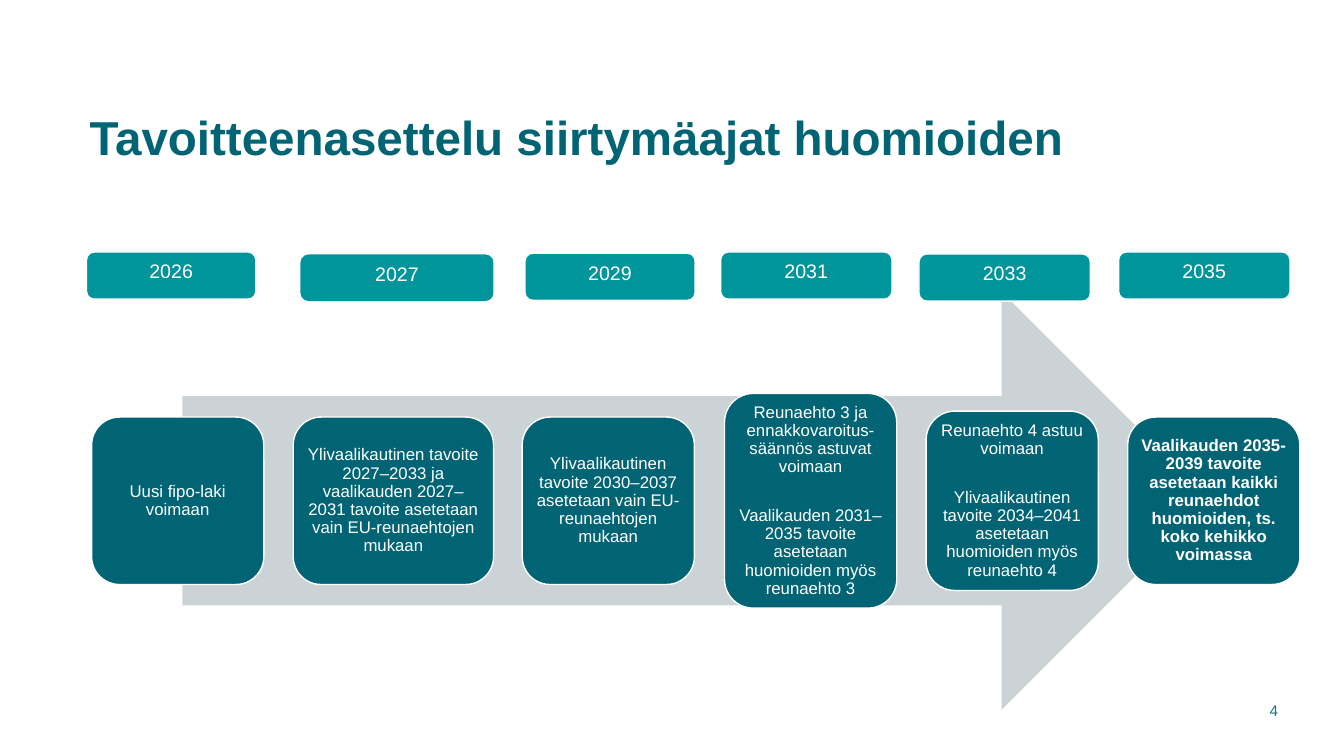
import pptx
import pptx.util
import pptx.dml.color
import pptx.enum.shapes
import pptx.enum.text
from dataclasses import dataclass

Cm, Pt = pptx.util.Cm, pptx.util.Pt
RGB = pptx.dml.color.RGBColor.from_string
SHAPE = pptx.enum.shapes.MSO_SHAPE
ALIGN = pptx.enum.text.PP_ALIGN
ANCHOR = pptx.enum.text.MSO_ANCHOR


@dataclass(frozen=True)
class Theme:
    font: str = "Arial"
    dark: str = "006475"
    teal: str = "00959B"
    grey: str = "CCD3D6"
    white: str = "FFFFFF"
    number: str = "1A7483"
    title_size: int = 34
    year_size: int = 14
    card_size: int = 12
    number_size: int = 11


THEME = Theme()

# Year, tag (left, top, width, height), tag outline, card (left, width, height), bold, paragraphs
STAGES = [
    ("2026", (2.18, 6.35, 4.27, 1.19), THEME.white, (2.31, 4.34, 4.22), False,
     ["Uusi fipo-laki voimaan"]),
    ("2027", (7.59, 6.43, 4.83, 1.14), THEME.teal, (7.39, 5.05, 4.22), False,
     ["Ylivaalikautinen tavoite 2027–2033 ja vaalikauden 2027–2031 tavoite "
      "asetetaan vain EU-reunaehtojen mukaan"]),
    ("2029", (13.23, 6.38, 4.29, 1.19), THEME.white, (13.16, 4.34, 4.22), False,
     ["Ylivaalikautinen tavoite 2030–2037 asetetaan vain EU-reunaehtojen mukaan"]),
    ("2031", (18.16, 6.35, 4.32, 1.19), THEME.white, (18.26, 4.34, 5.41), False,
     ["Reunaehto 3 ja ennakkovaroitus-säännös astuvat voimaan",
      "Vaalikauden 2031–2035 tavoite asetetaan huomioiden myös reunaehto 3"]),
    ("2033", (23.16, 6.4, 4.32, 1.19), THEME.white, (23.34, 4.34, 4.52), False,
     ["Reunaehto 4 astuu voimaan",
      "Ylivaalikautinen tavoite 2034–2041 asetetaan huomioiden myös reunaehto 4"]),
    ("2035", (28.19, 6.35, 4.32, 1.19), THEME.white, (28.42, 4.34, 4.22), True,
     ["Vaalikauden 2035-2039 tavoite asetetaan kaikki reunaehdot huomioiden, "
      "ts. koko kehikko voimassa"]),
]


def set_all(obj, values):
    for name, value in values.items():
        setattr(obj, name, value)


def write(sp, texts, size, color, frame, para, bold=False, gap=0):
    """Fill a shape with paragraphs that share one format."""
    tf = sp.text_frame
    set_all(tf, {"word_wrap": True, **frame})
    for i, text in enumerate(texts):
        p = tf.paragraphs[0] if i == 0 else tf.add_paragraph()
        set_all(p, para)
        if i:
            p.space_before = Pt(gap)
        r = p.add_run()
        r.text = text
        set_all(r.font, {"name": THEME.font, "size": Pt(size), "bold": bold})
        r.font.color.rgb = RGB(color)


def add_shape(s, kind, box, fill, line=None):
    sp = s.shapes.add_shape(kind, *map(Cm, box))
    sp.shadow.inherit = False
    sp.fill.solid()
    sp.fill.fore_color.rgb = RGB(fill)
    if line:
        sp.line.color.rgb = RGB(line)
        sp.line.width = Pt(1)
    else:
        sp.line.fill.background()
    return sp


def add_title(s, box, text):
    sp = s.shapes.add_textbox(*map(Cm, box))
    write(sp, [text], THEME.title_size, THEME.dark,
          {"vertical_anchor": ANCHOR.MIDDLE, "margin_left": 0, "margin_right": 0},
          {"line_spacing": 0.95}, bold=True)


def add_year(s, box, line, year):
    sp = add_shape(s, SHAPE.ROUNDED_RECTANGLE, box, THEME.teal, line)
    write(sp, [year], THEME.year_size, THEME.white,
          {"vertical_anchor": ANCHOR.TOP}, {"alignment": ALIGN.CENTER})


def add_card(s, box, texts, bold):
    sp = add_shape(s, SHAPE.ROUNDED_RECTANGLE, box, THEME.dark, THEME.white)
    write(sp, texts, THEME.card_size, THEME.white,
          {"vertical_anchor": ANCHOR.MIDDLE, "margin_left": Cm(0.13),
           "margin_right": Cm(0.13), "margin_top": 0, "margin_bottom": 0},
          {"alignment": ALIGN.CENTER, "line_spacing": 0.9}, bold, gap=22)


def add_timeline(s, box):
    """Arrow fills the box; cards are centred on its axis."""
    left, top, width, height = box
    add_shape(s, SHAPE.RIGHT_ARROW, box, THEME.grey)
    axis = top + height / 2
    for year, tag, line, (x, w, h), bold, texts in STAGES:
        add_year(s, tag, line, year)
        add_card(s, (x, axis - h / 2, w, h), texts, bold)


def add_page_number(s, box, number):
    sp = s.shapes.add_textbox(*map(Cm, box))
    write(sp, [number], THEME.number_size, THEME.number,
          {"vertical_anchor": ANCHOR.MIDDLE}, {"alignment": ALIGN.RIGHT})


def main():
    prs = pptx.Presentation()
    prs.slide_width, prs.slide_height = Cm(33.87), Cm(19.05)
    s = prs.slides.add_slide(prs.slide_layouts[6])
    add_title(s, (2.26, 2.01, 30.25, 3), "Tavoitteenasettelu siirtymäajat huomioiden")
    add_timeline(s, (4.6, 7.35, 25.91, 10.54))
    add_page_number(s, (29.39, 17.4, 3.07, 1.02), "4")
    prs.save("out.pptx")


if __name__ == "__main__":
    main()
